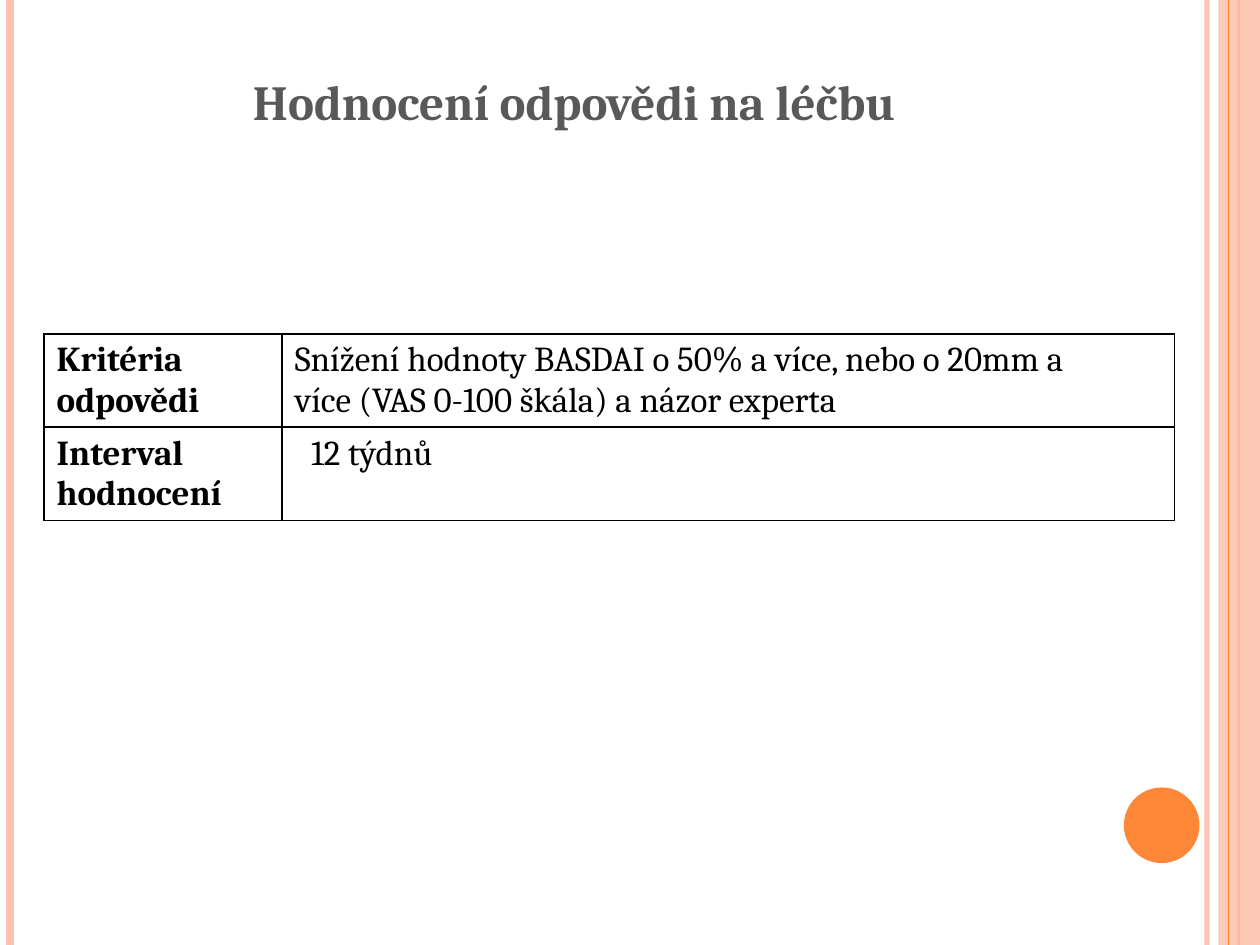
from lxml import etree
from pptx import Presentation
from pptx.dml.color import RGBColor
from pptx.enum.shapes import MSO_CONNECTOR, MSO_SHAPE
from pptx.oxml.ns import qn
from pptx.util import Inches, Pt

PEACH = RGBColor(0xFE, 0xC3, 0xAE)
ORANGE = RGBColor(0xFE, 0x86, 0x37)
GRAY = RGBColor(0x59, 0x59, 0x59)
BLACK = RGBColor(0, 0, 0)
FONT = "Cambria"
WIDTH, HEIGHT = 10, 7.5

COLUMNS = [1.89, 7.08]
ROW_HEIGHT = 0.74
ROWS = [
    (["Kritéria odpovědi"],
     ["Snížení hodnoty BASDAI o 50% a více, nebo o 20mm a",
      "více (VAS 0-100 škála) a názor experta"], 0),
    (["Interval hodnocení"], ["12 týdnů"], 0.13),
]


def add_text(tf, lines, size=20, color=BLACK, bold=False, indent=0):
    for i, line in enumerate(lines):
        p = tf.paragraphs[0] if i == 0 else tf.add_paragraph()
        if indent:
            p._p.get_or_add_pPr().set("marL", str(Inches(indent)))
        r = p.add_run()
        r.text = line
        r.font.name = FONT
        r.font.size = Pt(size)
        r.font.bold = bold
        r.font.color.rgb = color


def set_alpha(fill_parent, percent):
    color = fill_parent.find(".//" + qn("a:srgbClr"))
    etree.SubElement(color, qn("a:alpha")).set("val", str(percent * 1000))


def add_stripe(s, x, color, width, alpha=100):
    """Draw a vertical line over the full slide height."""
    c = s.shapes.add_connector(MSO_CONNECTOR.STRAIGHT, Inches(x), 0,
                               Inches(x), Inches(HEIGHT))
    c.line.color.rgb = color
    c.line.width = Pt(width)
    spPr = c._element.spPr
    if alpha < 100:
        set_alpha(spPr, alpha)
    etree.SubElement(spPr, qn("a:effectLst"))


def add_filled(s, kind, x, y, w, h, color, alpha=100):
    sp = s.shapes.add_shape(kind, Inches(x), Inches(y), Inches(w), Inches(h))
    sp.shadow.inherit = False
    sp.fill.solid()
    sp.fill.fore_color.rgb = color
    sp.line.fill.background()
    if alpha < 100:
        set_alpha(sp._element.spPr, alpha)


def set_borders(cell):
    tcPr = cell._tc.get_or_add_tcPr()
    for i, side in enumerate(("lnL", "lnR", "lnT", "lnB")):
        ln = etree.Element(qn("a:" + side), w=str(Pt(1)))
        fill = etree.SubElement(ln, qn("a:solidFill"))
        etree.SubElement(fill, qn("a:srgbClr"), val=str(BLACK))
        tcPr.insert(i, ln)


def add_criteria_table(s, x, y):
    table = s.shapes.add_table(
        len(ROWS), len(COLUMNS), Inches(x), Inches(y),
        Inches(sum(COLUMNS)), Inches(ROW_HEIGHT * len(ROWS))).table
    table.first_row = table.horz_banding = False
    for column, width in zip(table.columns, COLUMNS):
        column.width = Inches(width)
    for row, (label, content, indent) in zip(table.rows, ROWS):
        head, body = row.cells
        add_text(head.text_frame, label, bold=True)
        add_text(body.text_frame, content, indent=indent)
        for cell in (head, body):
            cell.fill.background()
            set_borders(cell)


def add_title(s, text):
    tf = s.shapes.add_textbox(Inches(1.91), Inches(0.52),
                              Inches(6.24), Inches(0.57)).text_frame
    tf.word_wrap = False
    add_text(tf, [text], size=28, color=GRAY, bold=True)


def add_decoration(s):
    add_stripe(s, 9.58, PEACH, 3, alpha=93)
    add_stripe(s, 0.08, PEACH, 4.5)
    add_stripe(s, 9.83, ORANGE, 1.5)
    add_filled(s, MSO_SHAPE.RECTANGLE, 9.67, 0, WIDTH - 9.67, HEIGHT, PEACH,
               alpha=87)
    add_stripe(s, 9.75, ORANGE, 0.75)
    add_filled(s, MSO_SHAPE.OVAL, 8.92, 6.25, 0.6, 0.6, ORANGE)


def main():
    prs = Presentation()
    prs.slide_width = Inches(WIDTH)
    prs.slide_height = Inches(HEIGHT)
    s = prs.slides.add_slide(prs.slide_layouts[6])
    add_decoration(s)
    add_criteria_table(s, 0.35, 2.65)
    add_title(s, "Hodnocení odpovědi na léčbu")
    prs.save("out.pptx")


if __name__ == "__main__":
    main()
